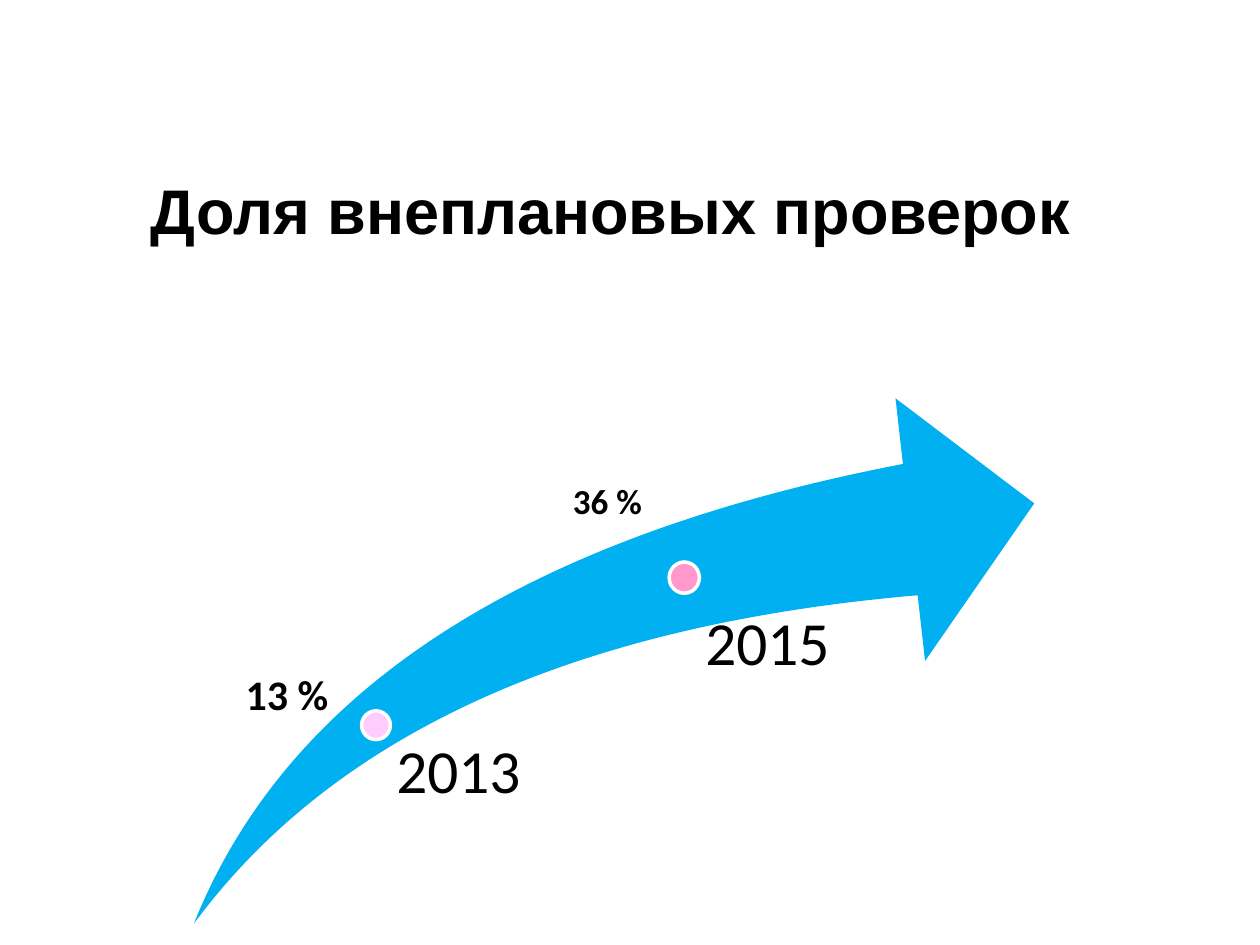
from pptx import Presentation
from pptx.dml.color import RGBColor
from pptx.enum.shapes import MSO_SHAPE as Preset
from pptx.enum.text import MSO_ANCHOR as Anchor, PP_ALIGN as Align
from pptx.util import Cm, Pt

# Offsets are in cm from the top left corner of the arrow
MILESTONES = [
    dict(year="2013", share="13 %", share_size=24, color="FFCCFF",
         dot=(3.38, 6.3, 0.58, 0.58), year_box=(3.78, 6.91, 2.82, 1.73),
         year_inset=0.3, share_box=(0.79, 5.31, 3.4, 1.27)),
    dict(year="2015", share="36 %", share_size=20, color="FF99CC",
         dot=(9.58, 3.3, 0.61, 0.63), year_box=(9.78, 4.32, 5.08, 1.96),
         year_inset=0.53, share_box=(7.39, 1.5, 2.79, 1.12)),
]


def rgb(color):
    return RGBColor.from_string(color)


def place(origin, box):
    """Turn a box relative to origin into slide lengths."""
    left, top, width, height = box
    return Cm(origin[0] + left), Cm(origin[1] + top), Cm(width), Cm(height)


def add_span(para, text, size, font, bold=False):
    span = para.add_run()
    span.text = text
    span.font.size = Pt(size)
    span.font.name = font
    span.font.bold = bold
    span.font.color.rgb = rgb("000000")


def add_preset(page, preset, position, color):
    shape = page.shapes.add_shape(preset, *position)
    shape.shadow.inherit = False
    shape.fill.solid()
    shape.fill.fore_color.rgb = rgb(color)
    shape.line.fill.background()
    return shape


def add_label(page, position, text, size, bold=False, insets=(0.25, 0.13, 0.25, 0.13)):
    frame = page.shapes.add_textbox(*position).text_frame
    frame.word_wrap = True
    (frame.margin_left, frame.margin_top,
     frame.margin_right, frame.margin_bottom) = map(Cm, insets)
    para = frame.paragraphs[0]
    add_span(para, text, size, "Calibri", bold)
    return para


def set_title(page, box, text):
    title = page.shapes.title
    title.left, title.top, title.width, title.height = place((0, 0), box)
    frame = title.text_frame
    frame.word_wrap = True
    frame.vertical_anchor = Anchor.MIDDLE
    frame.margin_bottom = Cm(1.52)
    para = frame.paragraphs[0]
    para.alignment = Align.CENTER
    add_span(para, text, 36, "Arial", bold=True)


def add_milestone(page, origin, item):
    """Place the dot on the arrow with its year below and share above."""
    dot = add_preset(page, Preset.OVAL, place(origin, item["dot"]), item["color"])
    dot.line.color.rgb = rgb("FFFFFF")
    dot.line.width = Pt(2)
    year = add_label(page, place(origin, item["year_box"]), item["year"], 35,
                     insets=(item["year_inset"], 0, 0, 0))
    year.line_spacing = 0.9
    add_label(page, place(origin, item["share_box"]), item["share"],
              item["share_size"], bold=True)


def add_growth_arrow(page, box):
    arrow = add_preset(page, Preset.SWOOSH_ARROW, place((0, 0), box), "00B0F0")
    arrow.adjustments[0] = 0.25
    arrow.adjustments[1] = 0.25
    for item in MILESTONES:
        add_milestone(page, box[:2], item)


def main():
    deck = Presentation()
    deck.slide_width, deck.slide_height = Cm(25.4), Cm(19.05)
    page = deck.slides.add_slide(deck.slide_layouts[5])
    set_title(page, (0.51, 1.93, 23.6, 5.99), "Доля внеплановых проверок")
    add_growth_arrow(page, (3.91, 8.03, 16.94, 10.59))
    deck.save("out.pptx")


if __name__ == "__main__":
    main()
